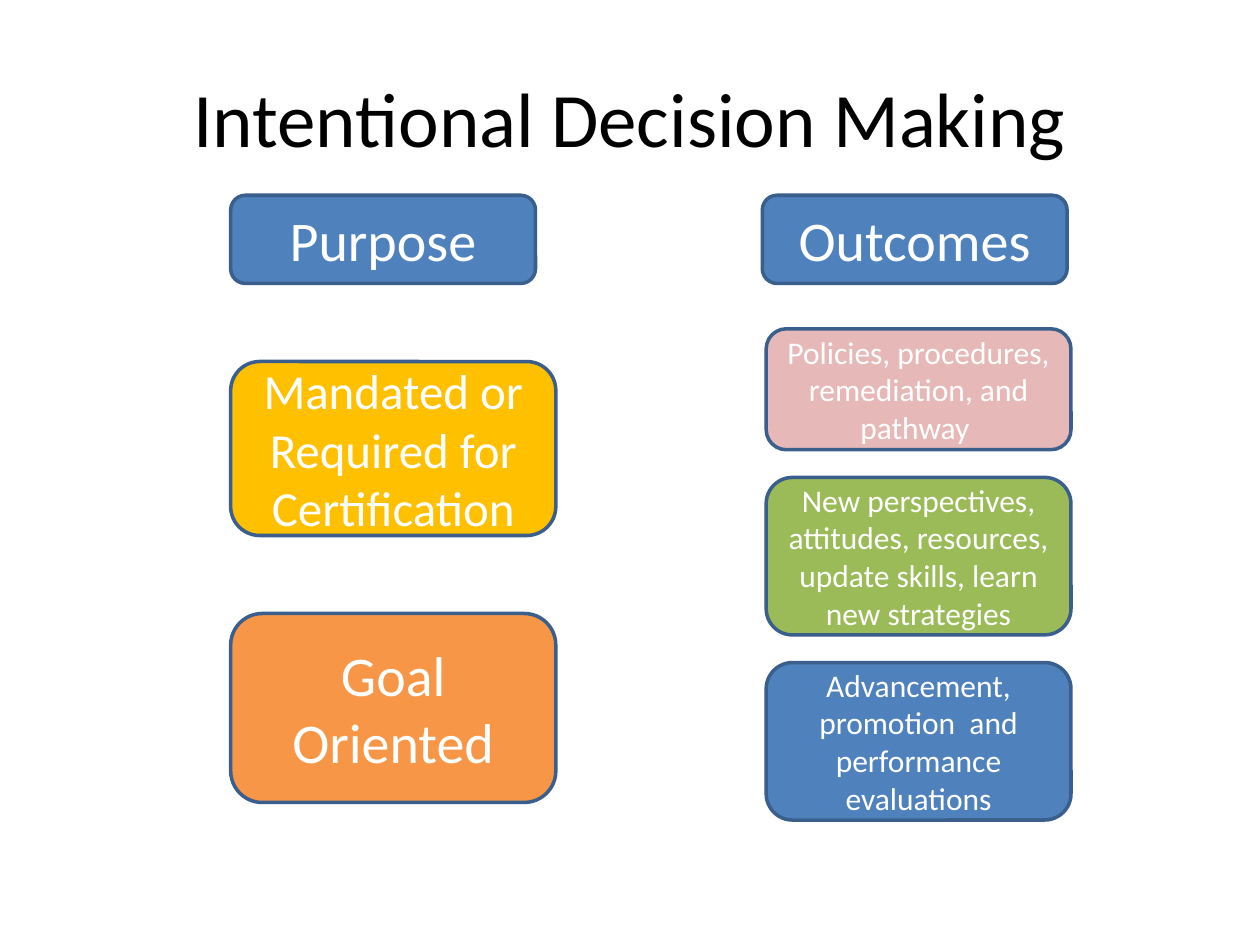
from pptx import Presentation
from pptx.dml.color import RGBColor
from pptx.enum import shapes, text
from pptx.util import Pt

BLUE = RGBColor(0x4F, 0x81, 0xBD)
OUTLINE = RGBColor(0x3A, 0x5F, 0x8C)
GOLD = RGBColor(0xFF, 0xC0, 0x00)
ORANGE = RGBColor(0xF7, 0x96, 0x46)
PINK = RGBColor(0xE6, 0xB9, 0xB8)
GREEN = RGBColor(0x9B, 0xBB, 0x59)
WHITE = RGBColor(0xFF, 0xFF, 0xFF)
BLACK = RGBColor(0x00, 0x00, 0x00)

FONT = "Calibri"
HEADING = "Intentional Decision Making"
HEADER_TOP, HEADER_WIDTH, HEADER_HEIGHT, HEADER_SIZE = 111.6, 174.2, 50.4, 32

COLUMNS = [
    {
        "header": "Purpose", "header_left": 131.8,
        "left": 131.8, "top": 206.6, "width": 185.8, "gap": 44.6,
        "cards": [
            ("Mandated or Required for Certification", 99.4, GOLD, 28),
            ("Goal Oriented", 108, ORANGE, 32),
        ],
    },
    {
        "header": "Outcomes", "header_left": 435.6,
        "left": 437.8, "top": 187.9, "width": 174.2, "gap": 15.8,
        "cards": [
            ("Policies, procedures, remediation, and pathway ", 69.1, PINK, 18),
            ("New perspectives, attitudes, resources, update skills, learn new strategies",
             90, GREEN, 18),
            ("Advancement, promotion  and performance evaluations", 90, BLUE, 18),
        ],
    },
]


def write(frame, words, size, color):
    frame.text = words
    frame.word_wrap = True
    frame.vertical_anchor = text.MSO_ANCHOR.MIDDLE
    paragraph = frame.paragraphs[0]
    paragraph.alignment = text.PP_ALIGN.CENTER
    font = paragraph.runs[0].font
    font.name, font.size = FONT, Pt(size)
    font.color.rgb = color


def add_card(slide, box, words, fill, size):
    card = slide.shapes.add_shape(
        shapes.MSO_SHAPE.ROUNDED_RECTANGLE, *(Pt(length) for length in box))
    card.shadow.inherit = False
    card.fill.solid()
    card.fill.fore_color.rgb = fill
    card.line.color.rgb = OUTLINE
    card.line.width = Pt(2)
    write(card.text_frame, words, size, WHITE)


def main():
    deck = Presentation()
    deck.slide_width, deck.slide_height = Pt(720), Pt(540)
    slide = deck.slides.add_slide(deck.slide_layouts[5])

    heading = slide.shapes.title
    heading.left, heading.top = Pt(36), Pt(21.6)
    heading.width, heading.height = Pt(648), Pt(90)
    write(heading.text_frame, HEADING, 44, BLACK)

    for column in COLUMNS:
        header_box = (column["header_left"], HEADER_TOP, HEADER_WIDTH, HEADER_HEIGHT)
        add_card(slide, header_box, column["header"], BLUE, HEADER_SIZE)
        top = column["top"]
        for words, height, fill, size in column["cards"]:
            add_card(slide, (column["left"], top, column["width"], height),
                     words, fill, size)
            top += height + column["gap"]

    deck.save("out.pptx")


if __name__ == "__main__":
    main()
